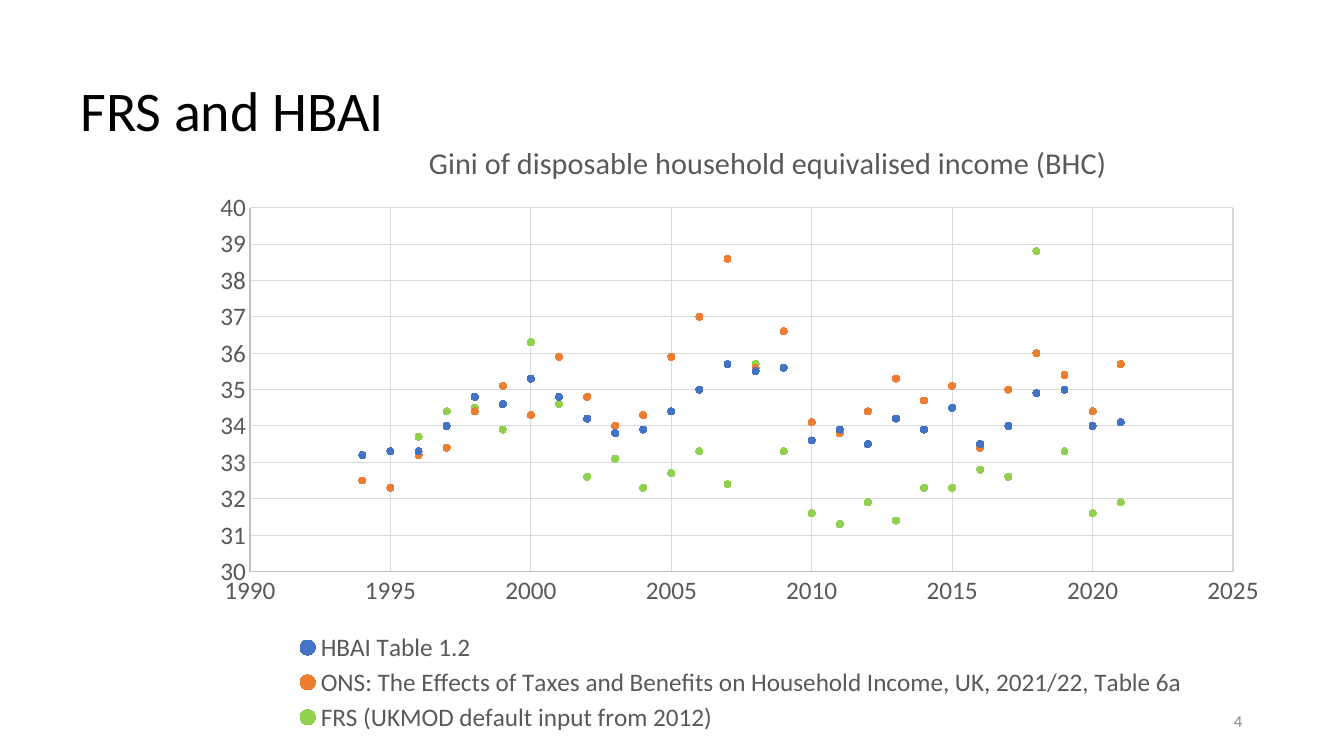
import pptx
import pptx.chart.data
import pptx.dml.color
import pptx.enum.chart
import pptx.enum.text
import pptx.oxml
import pptx.oxml.ns
import pptx.util

Inches, Pt = pptx.util.Inches, pptx.util.Pt
RGBColor = pptx.dml.color.RGBColor
Align = pptx.enum.text.PP_ALIGN

# Content
HEADING = "FRS and HBAI"
PAGE_NUMBER = "4"
GINI_TITLE = "Gini of disposable household equivalised income (BHC)"
LAST_YEAR = 2021

BLACK = RGBColor(0x00, 0x00, 0x00)
PAGE_GREY = RGBColor(0x8C, 0x8C, 0x8C)
LABEL_GREY = RGBColor(0x59, 0x59, 0x59)
AXIS_GREY = RGBColor(0xBF, 0xBF, 0xBF)
GRID_GREY = RGBColor(0xD9, 0xD9, 0xD9)
BLUE = RGBColor(0x44, 0x72, 0xC4)
ORANGE = RGBColor(0xED, 0x7D, 0x31)
GREEN = RGBColor(0x92, 0xD0, 0x50)

# Name, colour and yearly Gini values, each ending in LAST_YEAR
GINI_SOURCES = [
    ("HBAI Table 1.2", BLUE,
     [33.2, 33.3, 33.3, 34, 34.8, 34.6, 35.3, 34.8, 34.2, 33.8, 33.9, 34.4, 35, 35.7,
      35.5, 35.6, 33.6, 33.9, 33.5, 34.2, 33.9, 34.5, 33.5, 34, 34.9, 35, 34, 34.1]),
    ("ONS: The Effects of Taxes and Benefits on Household Income, UK, 2021/22, Table 6a",
     ORANGE,
     [32.5, 32.3, 33.2, 33.4, 34.4, 35.1, 34.3, 35.9, 34.8, 34, 34.3, 35.9, 37, 38.6,
      35.6, 36.6, 34.1, 33.8, 34.4, 35.3, 34.7, 35.1, 33.4, 35, 36, 35.4, 34.4, 35.7]),
    ("FRS (UKMOD default input from 2012)", GREEN,
     [33.7, 34.4, 34.5, 33.9, 36.3, 34.6, 32.6, 33.1, 32.3, 32.7, 33.3, 32.4, 35.7,
      33.3, 31.6, 31.3, 31.9, 31.4, 32.3, 32.3, 32.8, 32.6, 38.8, 33.3, 31.6, 31.9]),
]

# Places in inches: left, top, width, height
HEADING_BOX = (0.7, 0.4, 11.5, 1.45)
PAGE_BOX = (11.93, 6.95, 0.49, 0.4)
CHART_BOX = (1.97, 1.05, 10.73, 6.27)
PLOT_BOX = (2.48, 2.06, 9.75, 3.61)
LEGEND_BOX = (2.87, 6.23, 8.96, 1.08)
GINI_TITLE_CORNER = (4.2, 1.35)


def style_font(font, size, colour):
    font.name = "Calibri"
    font.size = Pt(size)
    font.bold = False
    font.color.rgb = colour


def add_text(slide, box, text, size, colour, align, spacing=1.0):
    frame = slide.shapes.add_textbox(*map(Inches, box)).text_frame
    frame.word_wrap = True
    frame.vertical_anchor = pptx.enum.text.MSO_ANCHOR.MIDDLE
    paragraph = frame.paragraphs[0]
    paragraph.alignment = align
    paragraph.line_spacing = spacing
    run = paragraph.add_run()
    run.text = text
    style_font(run.font, size, colour)


def place(parent, box, after=None, inner=False):
    """Set a manual layout from slide inches, as shares of the chart."""
    for old in parent.xpath("c:layout"):
        parent.remove(old)
    left, top, width, height = CHART_BOX
    shares = [(box[0] - left) / width, (box[1] - top) / height]
    shares += [length / whole for length, whole in zip(box[2:], (width, height))]
    parts = '<c:layoutTarget val="inner"/>' if inner else ""
    parts += '<c:xMode val="edge"/><c:yMode val="edge"/>'
    parts += "".join(f'<c:{key} val="{share:.4f}"/>' for key, share in zip("xywh", shares))
    layout = pptx.oxml.parse_xml(
        f'<c:layout {pptx.oxml.ns.nsdecls("c")}>'
        f"<c:manualLayout>{parts}</c:manualLayout></c:layout>")
    position = parent.index(parent.xpath(after)[0]) + 1 if after else 0
    parent.insert(position, layout)


def style_axis(axis, low, high, step):
    axis.minimum_scale, axis.maximum_scale, axis.major_unit = low, high, step
    axis.major_tick_mark = axis.minor_tick_mark = pptx.enum.chart.XL_TICK_MARK.NONE
    axis.has_major_gridlines = True
    for line, colour in ((axis.format.line, AXIS_GREY),
                         (axis.major_gridlines.format.line, GRID_GREY)):
        line.color.rgb = colour
        line.width = Pt(0.75)
    style_font(axis.tick_labels.font, 18, LABEL_GREY)
    axis.tick_labels.number_format = "General"
    axis.tick_labels.number_format_is_linked = False


def add_gini_chart(slide):
    gini_data = pptx.chart.data.XyChartData()
    for name, _, ginis in GINI_SOURCES:
        points = gini_data.add_series(name)
        for year, gini in enumerate(ginis, LAST_YEAR + 1 - len(ginis)):
            points.add_data_point(year, gini)
    chart = slide.shapes.add_chart(
        pptx.enum.chart.XL_CHART_TYPE.XY_SCATTER, *map(Inches, CHART_BOX), gini_data).chart
    style_font(chart.font, 18, BLACK)

    # Title, axes and legend
    chart.has_title = True
    run = chart.chart_title.text_frame.paragraphs[0].add_run()
    run.text = GINI_TITLE
    style_font(run.font, 21.6, LABEL_GREY)
    style_axis(chart.category_axis, 1990, 2025, 5)
    style_axis(chart.value_axis, 30, 40, 1)
    chart.has_legend = True
    chart.legend.position = pptx.enum.chart.XL_LEGEND_POSITION.BOTTOM
    chart.legend.include_in_layout = False
    style_font(chart.legend.font, 18, LABEL_GREY)

    # Markers
    chart.plots[0].vary_by_categories = False
    for series, (_, colour, _) in zip(chart.plots[0].series, GINI_SOURCES):
        series.format.line.fill.background()
        series.marker.style = pptx.enum.chart.XL_MARKER_STYLE.CIRCLE
        series.marker.size = 5
        series.marker.format.fill.solid()
        series.marker.format.fill.fore_color.rgb = colour
        series.marker.format.line.color.rgb = colour

    # Positions within the chart
    root = chart.element
    place(root.xpath("c:chart/c:title")[0], GINI_TITLE_CORNER, after="c:tx")
    place(root.xpath("c:chart/c:plotArea")[0], PLOT_BOX, inner=True)
    place(root.xpath("c:chart/c:legend")[0], LEGEND_BOX, after="c:legendPos")


def main():
    deck = pptx.Presentation()
    deck.slide_width, deck.slide_height = Inches(13.33), Inches(7.5)
    slide = deck.slides.add_slide(deck.slide_layouts[6])
    add_text(slide, HEADING_BOX, HEADING, 40, BLACK, Align.LEFT, spacing=0.9)
    add_text(slide, PAGE_BOX, PAGE_NUMBER, 12, PAGE_GREY, Align.RIGHT)
    add_gini_chart(slide)
    deck.save("out.pptx")


if __name__ == "__main__":
    main()
